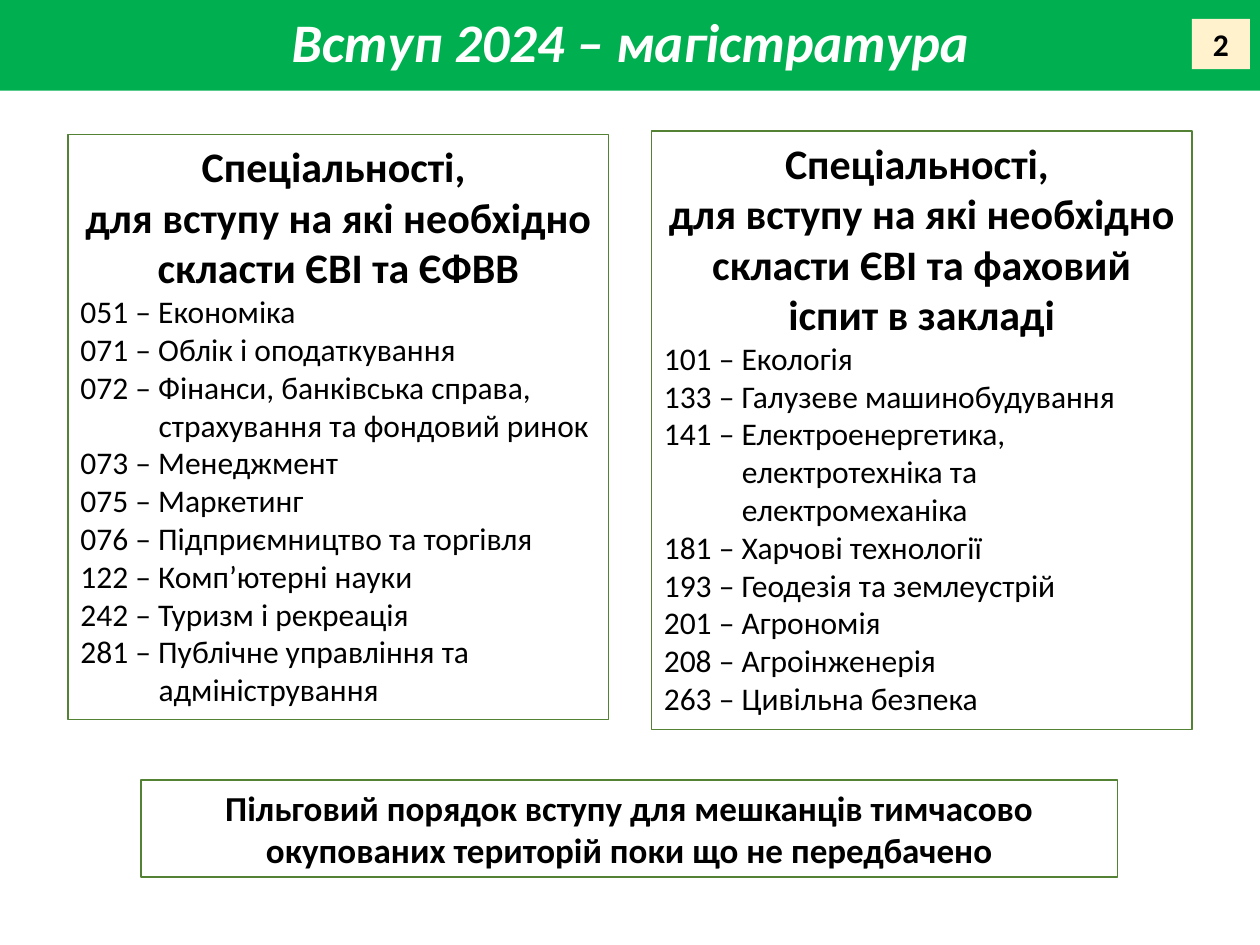
from pptx import Presentation
from pptx.dml.color import RGBColor
from pptx.enum.shapes import MSO_SHAPE as Shape
from pptx.enum.text import MSO_ANCHOR as Anchor, MSO_AUTO_SIZE as AutoSize, PP_ALIGN as Align
from pptx.util import Inches, Pt

GREEN = RGBColor(0x00, 0xB0, 0x50)
DARK_GREEN = RGBColor(0x54, 0x82, 0x35)
CREAM = RGBColor(0xFF, 0xF2, 0xCC)
BLACK = RGBColor(0, 0, 0)
WHITE = RGBColor(0xFF, 0xFF, 0xFF)
FONT = "Calibri"
HANGING = Inches(0.62)

EXAM_HEADING = "для вступу на які необхідно скласти ЄВІ та ЄФВВ"
EXAM_SPECIALTIES = [
    "051 – Економіка",
    "071 – Облік і оподаткування",
    "072 – Фінанси, банківська справа,\vстрахування та фондовий ринок",
    "073 – Менеджмент",
    "075 – Маркетинг",
    "076 – Підприємництво та торгівля",
    "122 – Комп’ютерні науки",
    "242 – Туризм і рекреація",
    "281 – Публічне управління та\vадміністрування",
]
FACULTY_HEADING = "для вступу на які необхідно скласти ЄВІ та фаховий іспит в закладі"
FACULTY_SPECIALTIES = [
    "101 – Екологія",
    "133 – Галузеве машинобудування",
    "141 – Електроенергетика,\vелектротехніка та\vелектромеханіка",
    "181 – Харчові технології",
    "193 – Геодезія та землеустрій",
    "201 – Агрономія",
    "208 – Агроінженерія",
    "263 – Цивільна безпека",
]


def write(paragraph, text, size, color=BLACK, bold=True, italic=False, align=Align.CENTER):
    """Fill a paragraph with uniformly formatted text."""
    paragraph.text = text
    paragraph.alignment = align
    font = paragraph.font
    font.name, font.size, font.bold, font.italic = FONT, Pt(size), bold, italic
    font.color.rgb = color


def add_banner(slide, text):
    """Turn the title placeholder into the green banner."""
    banner = slide.shapes.title
    banner.left, banner.top = Inches(0), Inches(-0.01)
    banner.width, banner.height = Inches(10), Inches(0.73)
    banner.fill.solid()
    banner.fill.fore_color.rgb = GREEN
    frame = banner.text_frame
    frame.auto_size = AutoSize.NONE
    frame.vertical_anchor = Anchor.MIDDLE
    write(frame.paragraphs[0], text, 31, WHITE, italic=True)
    frame.paragraphs[0].line_spacing = 0.9


def add_box(slide, left, top, width, height, fill=None, line=None):
    """Add a rectangle and return its text frame."""
    box = slide.shapes.add_shape(
        Shape.RECTANGLE, Inches(left), Inches(top), Inches(width), Inches(height))
    box.shadow.inherit = False
    if fill is None:
        box.fill.background()
    else:
        box.fill.solid()
        box.fill.fore_color.rgb = fill
    if line is None:
        box.line.fill.background()
    else:
        box.line.color.rgb = line
        box.line.width = Pt(0.75)
    frame = box.text_frame
    frame.word_wrap = True
    frame.vertical_anchor = Anchor.TOP
    return frame


def add_specialties(slide, left, top, height, heading, specialties):
    """Add a framed list of specialties under a two-part heading."""
    frame = add_box(slide, left, top, 4.29, height, line=DARK_GREEN)
    write(frame.paragraphs[0], "Спеціальності, ", 24)
    write(frame.add_paragraph(), heading, 24)
    for specialty in specialties:
        entry = frame.add_paragraph()
        write(entry, specialty, 18, bold=False, align=Align.LEFT)
        properties = entry._p.get_or_add_pPr()
        properties.set("marL", str(HANGING))
        properties.set("indent", str(-HANGING))


def main():
    """Build the admission slide and save it."""
    deck = Presentation()
    deck.slide_width, deck.slide_height = Inches(10), Inches(7.5)
    slide = deck.slides.add_slide(deck.slide_layouts[5])
    add_banner(slide, "Вступ 2024 – магістратура")
    page_number = add_box(slide, 9.46, 0.15, 0.46, 0.4, fill=CREAM)
    write(page_number.paragraphs[0], "2", 18)
    add_specialties(slide, 5.17, 1.04, 4.75, FACULTY_HEADING, FACULTY_SPECIALTIES)
    add_specialties(slide, 0.54, 1.07, 4.64, EXAM_HEADING, EXAM_SPECIALTIES)
    notice = add_box(slide, 1.12, 6.19, 7.75, 0.77, line=DARK_GREEN)
    write(notice.paragraphs[0], "Пільговий порядок вступу для мешканців тимчасово "
          "окупованих територій поки що не передбачено", 20)
    deck.save("out.pptx")


if __name__ == "__main__":
    main()
